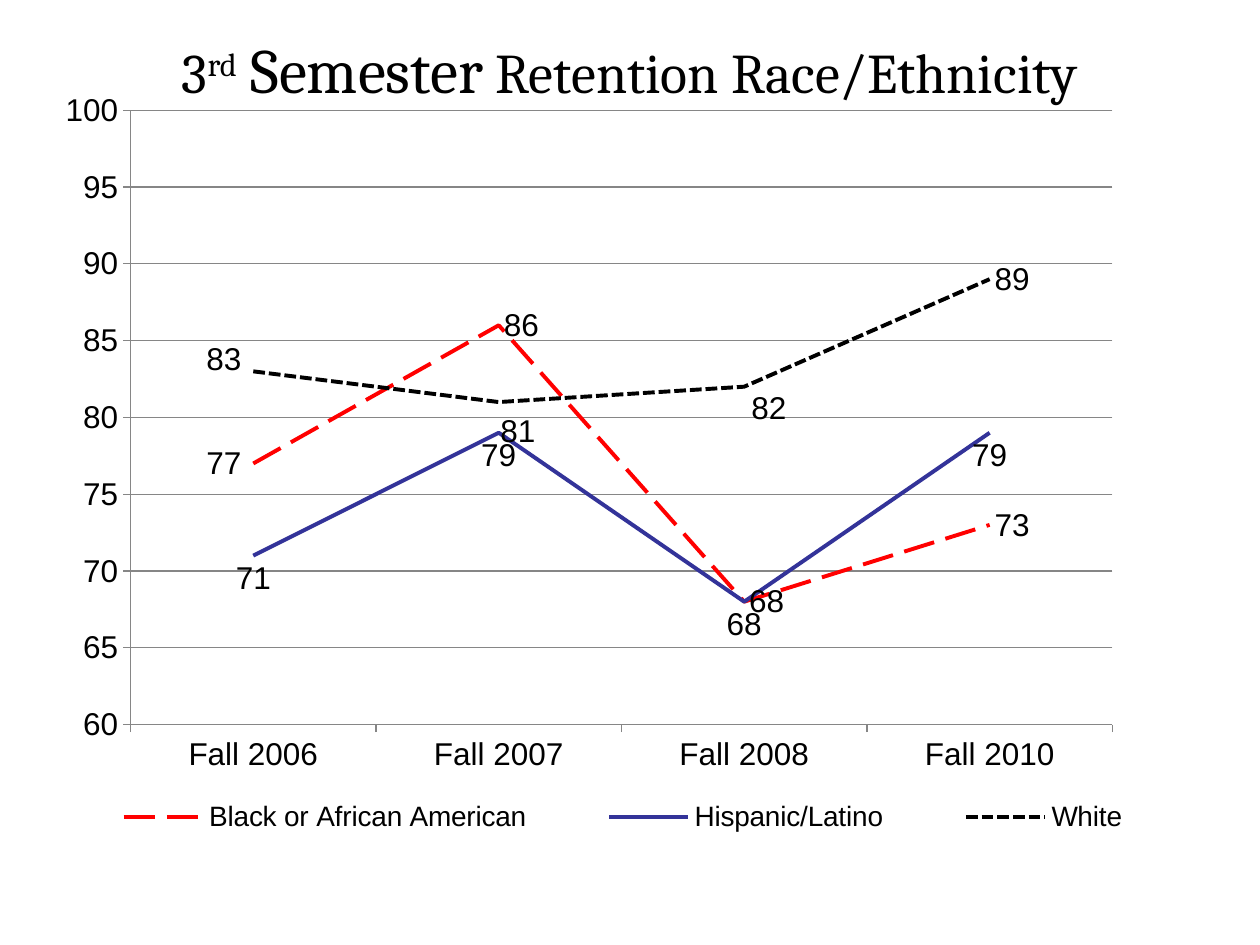
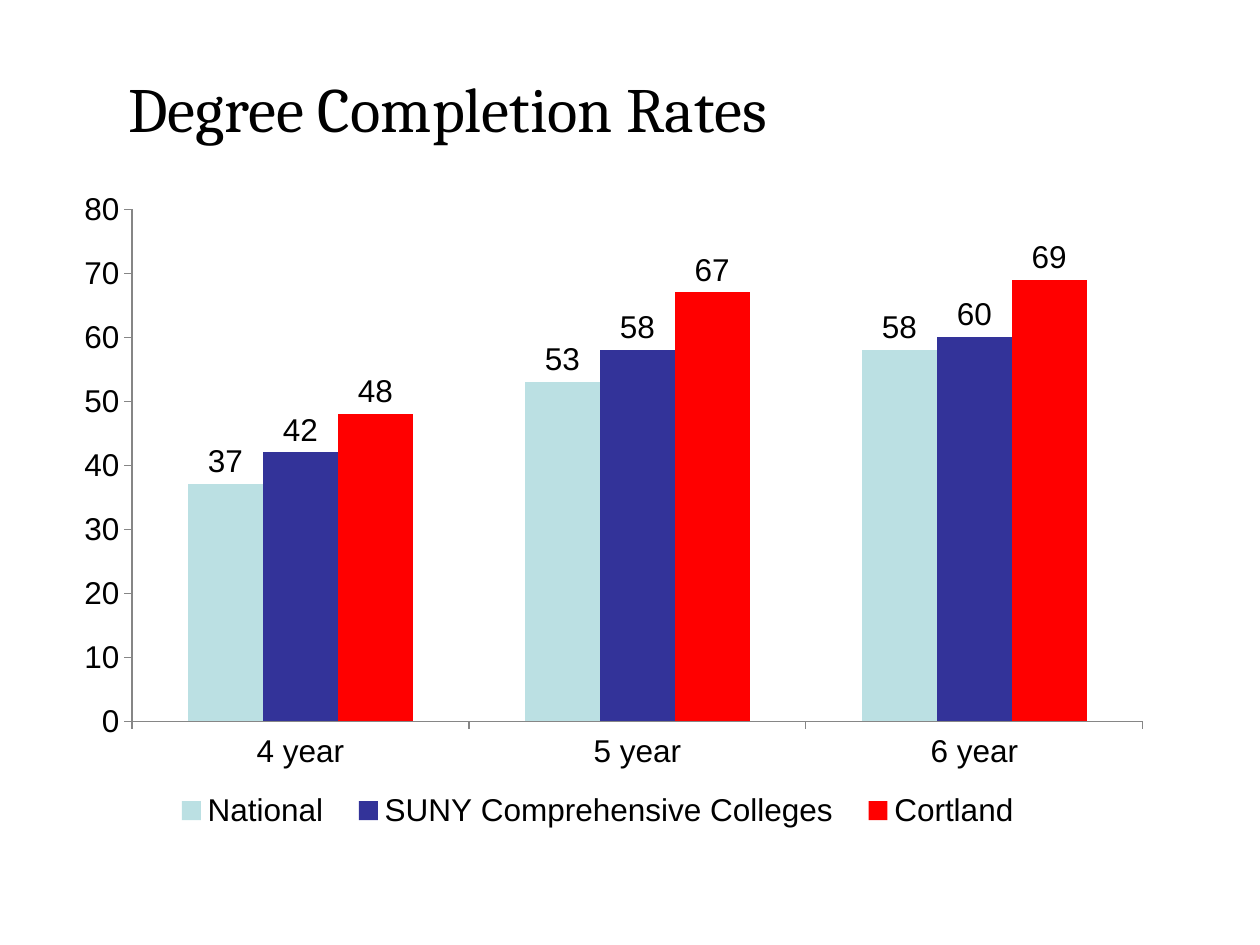
from dataclasses import dataclass

from lxml import etree
from pptx import Presentation
from pptx import util as u
from pptx.chart import data as chart_data
from pptx.dml.color import RGBColor
from pptx.enum import chart as chart_enum
from pptx.enum import dml, text
from pptx.oxml import ns

PX = 9144
BLACK = RGBColor(0x00, 0x00, 0x00)
GRAY = RGBColor(0x86, 0x86, 0x86)
RED = RGBColor(0xFF, 0x00, 0x00)
NAVY = RGBColor(0x33, 0x33, 0x99)
PALE_TEAL = RGBColor(0xBB, 0xE0, 0xE3)
TITLE_FONT = "Cambria"
CHART_FONT = "Arial"
CHART_SIZE = 18
TITLE_ONLY = 5

ChartType = chart_enum.XL_CHART_TYPE
Label = chart_enum.XL_LABEL_POSITION
Dash = dml.MSO_LINE
Align = text.PP_ALIGN


@dataclass(frozen=True)
class Box:
    left: int
    top: int
    width: int
    height: int

    def emu(self) -> tuple[int, int, int, int]:
        return self.left * PX, self.top * PX, self.width * PX, self.height * PX


@dataclass(frozen=True)
class Fractions:
    x: float
    y: float
    w: float
    h: float


@dataclass(frozen=True)
class TitleRun:
    words: str
    size: int
    superscript: bool = False


@dataclass(frozen=True)
class PointLabel:
    index: int
    position: Label
    shift: tuple[float, float]


@dataclass(frozen=True)
class Series:
    name: str
    values: tuple[int, ...]
    color: RGBColor
    label_position: Label
    dash: Dash = Dash.SOLID
    point_labels: tuple[PointLabel, ...] = ()


@dataclass(frozen=True)
class ChartSpec:
    kind: ChartType
    box: Box
    plot: Fractions
    legend: Fractions
    categories: tuple[str, ...]
    series: tuple[Series, ...]
    minimum: int
    maximum: int
    step: int
    gridlines: bool
    legend_size: int


RETENTION = ChartSpec(
    ChartType.LINE,
    Box(25, 58, 925, 622),
    Fractions(0.085, 0.0475, 0.8425, 0.784),
    Fractions(0.016, 0.909, 0.983, 0.08),
    ("Fall 2006", "Fall 2007", "Fall 2008", "Fall 2010"),
    (
        Series("Black or African American", (77, 86, 68, 73), RED, Label.RIGHT,
               Dash.LONG_DASH, (PointLabel(0, Label.LEFT, (-0.006, 0)),)),
        Series("Hispanic/Latino", (71, 79, 68, 79), NAVY, Label.BELOW),
        Series("White", (83, 81, 82, 89), BLACK, Label.RIGHT, Dash.SQUARE_DOT, (
            PointLabel(0, Label.LEFT, (-0.006, -0.015)),
            PointLabel(1, Label.RIGHT, (-0.003, 0.038)),
            PointLabel(2, Label.RIGHT, (0.002, 0.028)),
        )),
    ),
    60, 100, 5, True, 16,
)

COMPLETION = ChartSpec(
    ChartType.COLUMN_CLUSTERED,
    Box(50, 142, 875, 525),
    Fractions(0.0625, 0.046, 0.917, 0.774),
    Fractions(0.085, 0.915, 0.8, 0.08),
    ("4 year", "5 year", "6 year"),
    (
        Series("National", (37, 53, 58), PALE_TEAL, Label.OUTSIDE_END),
        Series("SUNY Comprehensive Colleges", (42, 58, 60), NAVY, Label.OUTSIDE_END),
        Series("Cortland", (48, 67, 69), RED, Label.OUTSIDE_END),
    ),
    0, 80, 10, False, CHART_SIZE,
)


def set_layout(parent, position: int, **settings) -> None:
    for old_layout in parent.findall(ns.qn("c:layout")):
        parent.remove(old_layout)
    layout = etree.Element(ns.qn("c:layout"))
    manual = etree.SubElement(layout, ns.qn("c:manualLayout"))
    for tag, value in settings.items():
        etree.SubElement(manual, ns.qn(f"c:{tag}")).set("val", str(value))
    parent.insert(position, layout)


def set_frame_layout(parent, position: int, frame: Fractions, **target) -> None:
    set_layout(parent, position, **target, xMode="edge", yMode="edge",
               x=frame.x, y=frame.y, w=frame.w, h=frame.h)


def add_title(slide, box: Box, runs: tuple[TitleRun, ...], alignment: Align) -> None:
    title = slide.shapes.title
    title.left, title.top, title.width, title.height = box.emu()
    frame = title.text_frame
    frame.auto_size = text.MSO_AUTO_SIZE.NONE
    frame.vertical_anchor = text.MSO_ANCHOR.MIDDLE
    paragraph = frame.paragraphs[0]
    paragraph.alignment = alignment
    for item in runs:
        run = paragraph.add_run()
        run.text = item.words
        run.font.name = TITLE_FONT
        run.font.size = u.Pt(item.size)
        run.font.color.rgb = BLACK
        if item.superscript:
            run._r.get_or_add_rPr().set("baseline", "30000")


def style_font(font, size: int) -> None:
    font.name = CHART_FONT
    font.size = u.Pt(size)
    font.bold = False
    font.color.rgb = BLACK


def style_line(line, color: RGBColor, width: float) -> None:
    line.color.rgb = color
    line.width = u.Pt(width)


def style_axes(chart, spec: ChartSpec) -> None:
    for axis in (chart.category_axis, chart.value_axis):
        axis.major_tick_mark = chart_enum.XL_TICK_MARK.OUTSIDE
        axis.minor_tick_mark = chart_enum.XL_TICK_MARK.NONE
        style_line(axis.format.line, GRAY, 0.75)
        style_font(axis.tick_labels.font, CHART_SIZE)
    axis = chart.value_axis
    axis.minimum_scale = spec.minimum
    axis.maximum_scale = spec.maximum
    axis.major_unit = spec.step
    axis.has_major_gridlines = spec.gridlines
    if spec.gridlines:
        style_line(axis.major_gridlines.format.line, GRAY, 0.75)


def style_series(plotted, series: Series, is_line: bool) -> None:
    if is_line:
        plotted.smooth = False
        style_line(plotted.format.line, series.color, 2.25)
        plotted.format.line.dash_style = series.dash
    else:
        plotted.format.fill.solid()
        plotted.format.fill.fore_color.rgb = series.color
    labels = plotted.data_labels
    labels.show_value = True
    labels.position = series.label_position
    style_font(labels.font, CHART_SIZE)
    for point in series.point_labels:
        label = plotted.points[point.index].data_label
        style_font(label.font, CHART_SIZE)
        label.position = point.position
        x, y = point.shift
        element = labels._element.xpath(f"c:dLbl[c:idx/@val='{point.index}']")[0]
        set_layout(element, 1, x=x, y=y)


def add_chart(slide, spec: ChartSpec) -> None:
    data = chart_data.CategoryChartData()
    data.categories = spec.categories
    for series in spec.series:
        data.add_series(series.name, series.values)
    chart = slide.shapes.add_chart(spec.kind, *spec.box.emu(), data).chart
    chart.has_title = False
    style_font(chart.font, CHART_SIZE)
    style_axes(chart, spec)
    chart.has_legend = True
    chart.legend.position = chart_enum.XL_LEGEND_POSITION.BOTTOM
    chart.legend.include_in_layout = False
    style_font(chart.legend.font, spec.legend_size)
    set_frame_layout(chart._chartSpace.chart.plotArea, 0, spec.plot, layoutTarget="inner")
    set_frame_layout(chart.legend._element, 1, spec.legend)
    plot = chart.plots[0]
    plot.vary_by_categories = False
    is_line = spec.kind == ChartType.LINE
    if not is_line:
        plot.gap_width = 150
        plot.overlap = 0
    for plotted, series in zip(plot.series, spec.series):
        style_series(plotted, series, is_line)


def build_retention(presentation) -> None:
    slide = presentation.slides.add_slide(presentation.slide_layouts[TITLE_ONLY])
    add_chart(slide, RETENTION)
    add_title(slide, Box(75, 0, 850, 108), (
        TitleRun("3", 32),
        TitleRun("rd", 32, True),
        TitleRun(" Semester", 36),
        TitleRun(" Retention Race/Ethnicity", 32),
    ), Align.CENTER)


def build_completion(presentation) -> None:
    slide = presentation.slides.add_slide(presentation.slide_layouts[TITLE_ONLY])
    add_title(slide, Box(92, 50, 858, 71),
              (TitleRun("Degree Completion Rates", 36),), Align.LEFT)
    add_chart(slide, COMPLETION)


def main() -> None:
    presentation = Presentation()
    presentation.slide_width = 1000 * PX
    presentation.slide_height = 750 * PX
    build_retention(presentation)
    build_completion(presentation)
    presentation.save("out.pptx")


if __name__ == "__main__":
    main()
